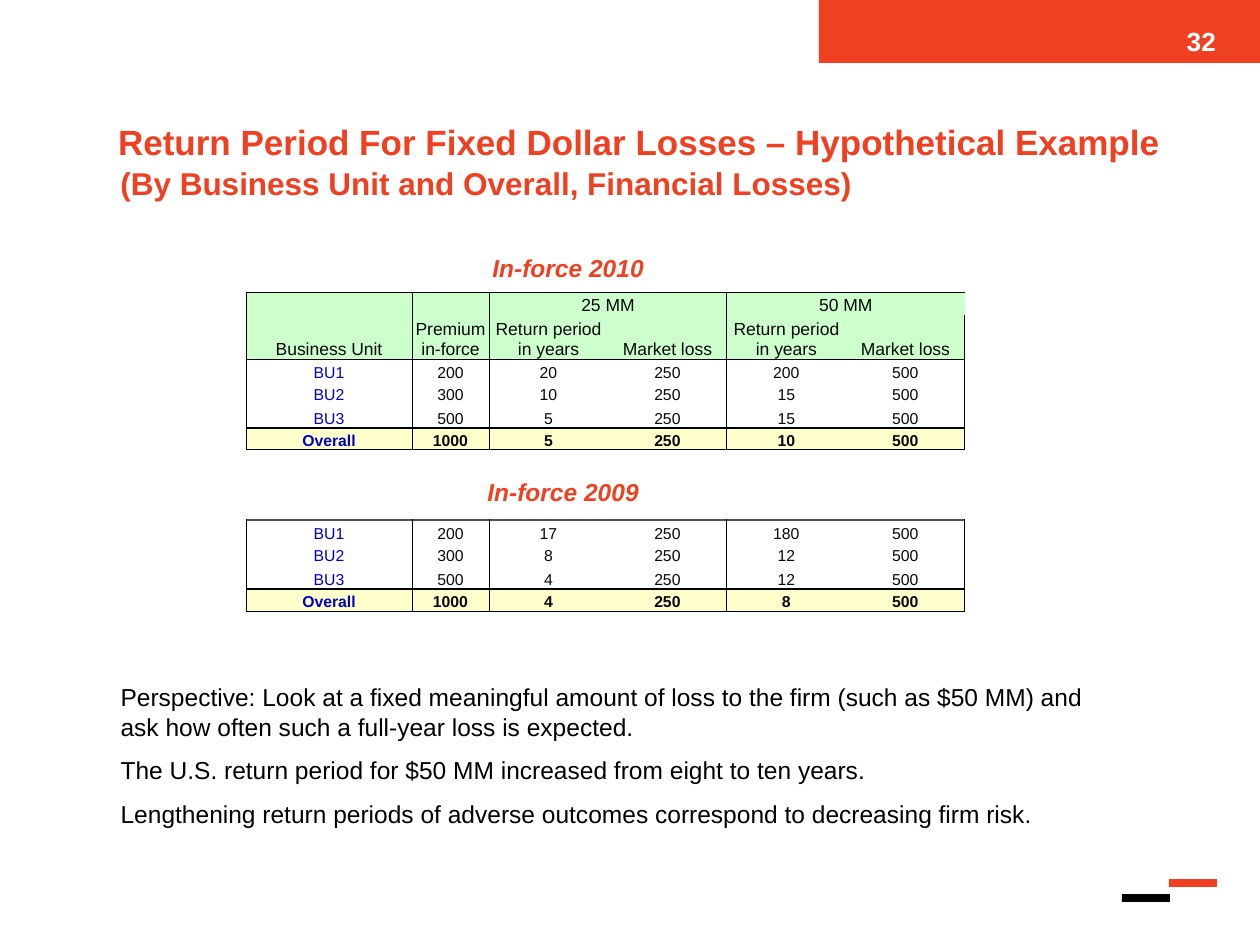
"""Build the return period slide with its two in-force tables."""
from lxml import etree
from pptx import Presentation
from pptx import util as u
from pptx.dml.color import RGBColor
from pptx.enum import shapes, text
from pptx.oxml.ns import qn

theme = {
    "font": "Arial",
    "red": "EF4122", "black": "000000", "white": "FFFFFF", "gray": "505050",
    "blue": "0000CC", "ink": "080808", "green": "CCFFCC", "cream": "FFFFCC",
    "title": 20, "sub": 18, "page": 15, "body": 14, "head": 10, "cell": 9,
}
ALIGN, ANCHOR = text.PP_ALIGN, text.MSO_ANCHOR


def px(*nums):
    return [u.Emu(round(n * 914400 / 126)) for n in nums]


def style(frame, size, color, bold=False, italic=False, align=ALIGN.LEFT):
    for para in frame.paragraphs:
        para.alignment = align
        for run in para.runs:
            font = run.font
            font.name, font.size = theme["font"], u.Pt(theme[size])
            font.bold, font.italic = bold, italic
            font.color.rgb = RGBColor.from_string(theme[color])


deck = Presentation()
deck.slide_width, deck.slide_height = px(1260, 945)
slide = deck.slides.add_slide(deck.slide_layouts[1])

bars = [
    (1169, 879, 48, 8, "red"),
    (1122, 894, 48, 8, "black"),
    (819, 0, 441, 63, "red"),
]
for *box, color in bars:
    bar = slide.shapes.add_shape(shapes.MSO_SHAPE.RECTANGLE, *px(*box))
    bar.shadow.inherit = False
    bar.fill.solid()
    bar.fill.fore_color.rgb = RGBColor.from_string(theme[color])
    bar.line.fill.background()

title = slide.shapes.title
title.left, title.top, title.width, title.height = px(118, 120, 1130, 40)
frame = title.text_frame
frame.margin_left = frame.margin_right = frame.margin_top = frame.margin_bottom = 0
frame.vertical_anchor = ANCHOR.TOP
frame.text = "Return Period For Fixed Dollar Losses – Hypothetical Example"
style(frame, "title", "red", bold=True)

body = slide.placeholders[1]
body.left, body.top, body.width, body.height = px(108, 676, 1022, 161)
frame = body.text_frame
frame.text = "\n".join([
    "Perspective: Look at a fixed meaningful amount of loss to the firm "
    "(such as $50 MM) and ask how often such a full-year loss is expected.",
    "The U.S. return period for $50 MM increased from eight to ten years.",
    "Lengthening return periods of adverse outcomes correspond to decreasing firm risk.",
])
for n, para in enumerate(frame.paragraphs):
    props = para._p.get_or_add_pPr()
    props.set("marL", "0")
    props.set("indent", "0")
    etree.SubElement(props, qn("a:buNone"))
    para.space_before = u.Pt(8 if n else 0)
style(frame, "body", "black")

labels = [
    ("(By Business Unit and Overall, Financial Losses)", 108, 158, 906, 50, "sub", False),
    ("In-force 2010", 480, 247, 200, 41, "body", True),
    ("In-force 2009", 475, 471, 200, 41, "body", True),
]
for words, *box, size, italic in labels:
    frame = slide.shapes.add_textbox(*px(*box)).text_frame
    frame.word_wrap = True
    frame.text = words
    style(frame, size, "red", bold=True, italic=italic)

frame = slide.shapes.add_textbox(*px(1166, 25, 50, 32)).text_frame
frame.margin_left = frame.margin_right = frame.margin_top = frame.margin_bottom = 0
frame.vertical_anchor = ANCHOR.BOTTOM
frame.text = "32"
style(frame, "page", "white", bold=True, align=ALIGN.RIGHT)

heads = [
    ["", "", "25 MM", "", "50 MM", ""],
    ["Business Unit", "Premium\vin-force"] + ["Return period\vin years", "Market loss"] * 2,
]
units = [("BU1", 200), ("BU2", 300), ("BU3", 500), ("Overall", 1000)]
years = {2010: [(20, 200), (10, 15), (5, 15), (5, 10)],
         2009: [(17, 180), (8, 12), (4, 12), (4, 8)]}
wide = [166, 77, 119, 119, 119, 119]
high = [23, 44, 23, 22, 24, 22]
thin, thick = (0.5, "black"), (1, "black")

for year, top, skip, lid in [(2010, 292, 0, thin), (2009, 520, 2, (1, "gray"))]:
    rows = heads[skip:] + [
        [unit, prem, low, 250, far, 500]
        for (unit, prem), (low, far) in zip(units, years[year])
    ]
    tall = high[skip:]
    rules = ([None, thin, None, None, thick, thin])[skip:]
    grid = slide.shapes.add_table(
        len(rows), len(wide), *px(246, top, sum(wide), sum(tall))).table
    grid.first_row = grid.horz_banding = False
    for col, size in zip(grid.columns, px(*wide)):
        col.width = size
    for row, size in zip(grid.rows, px(*tall)):
        row.height = size

    for r, row in enumerate(rows):
        head, last = r + skip < 2, r == len(rows) - 1
        for c, value in enumerate(row):
            cell = grid.cell(r, c)
            cell.margin_left = cell.margin_right = cell.margin_top = px(1)[0]
            cell.margin_bottom = 0
            cell.vertical_anchor = ANCHOR.BOTTOM
            cell.text_frame.text = str(value)
            size = "head" if head else "cell"
            style(cell.text_frame, size, "ink" if head or c else "blue",
                  bold=last, align=ALIGN.CENTER)
            if value == "":
                end = cell.text_frame.paragraphs[0]._p.get_or_add_endParaRPr()
                end.set("sz", str(theme[size] * 100))
            edges = {
                "L": thin if c in (0, 1, 2, 4) else None,
                "R": thin if c in (0, 1, 3, 5) else None,
                "T": rules[r - 1] if r else lid,
                "B": rules[r],
            }
            props = cell._tc.get_or_add_tcPr()
            for side, edge in edges.items():
                line = etree.SubElement(props, qn("a:ln" + side))
                if edge:
                    line.set("w", str(u.Pt(edge[0])))
                    fill = etree.SubElement(line, qn("a:solidFill"))
                    etree.SubElement(fill, qn("a:srgbClr")).set("val", theme[edge[1]])
                else:
                    etree.SubElement(line, qn("a:noFill"))
            if head or last:
                cell.fill.solid()
                cell.fill.fore_color.rgb = RGBColor.from_string(
                    theme["green" if head else "cream"])
            else:
                cell.fill.background()
    if not skip:
        for c in (2, 4):
            grid.cell(0, c).merge(grid.cell(0, c + 1))

deck.save("out.pptx")
